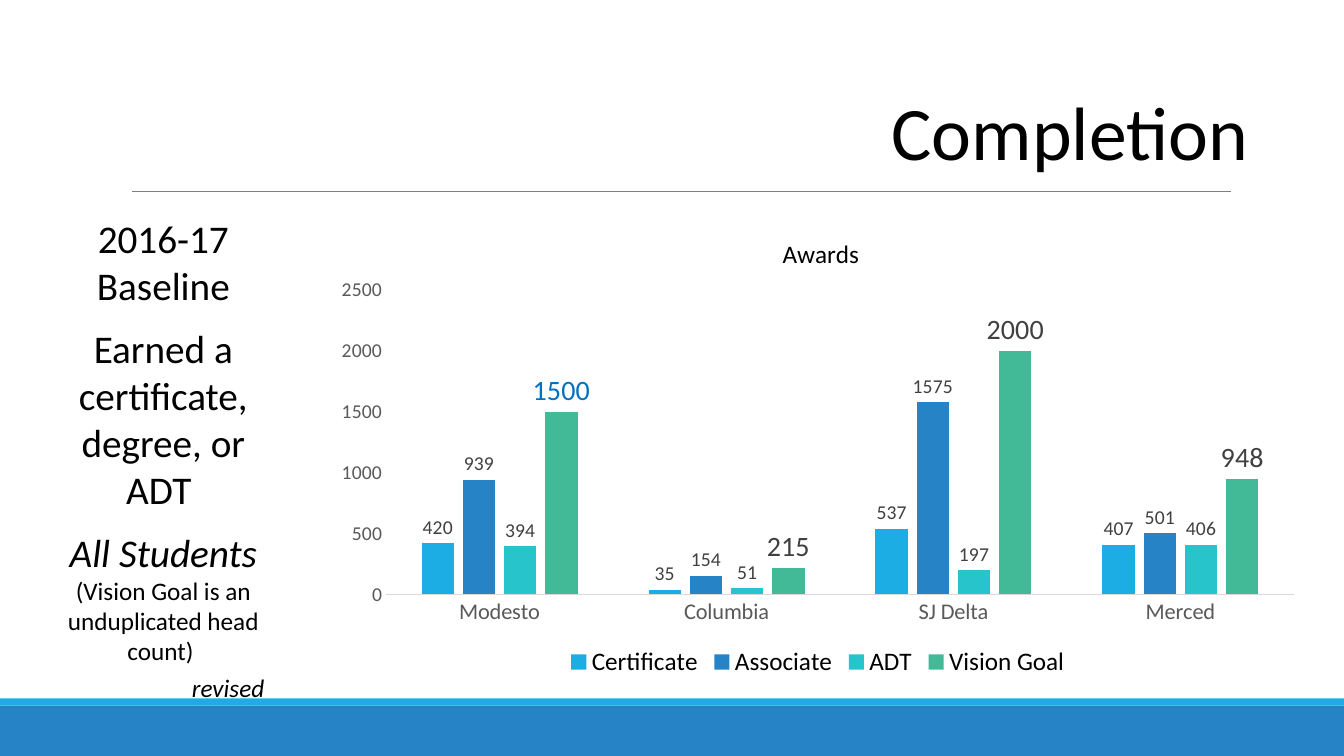
from lxml import etree
from pptx import Presentation
from pptx import util as u
from pptx.chart.data import CategoryChartData
from pptx.dml.color import RGBColor
from pptx.enum import chart as ch, shapes, text
from pptx.oxml import ns

FONT = "Calibri"
CITIES = ["Modesto", "Columbia", "SJ Delta", "Merced"]
AWARDS = [
    ("Certificate", [420, 35, 537, 407], "1CADE4", 14),
    ("Associate", [939, 154, 1575, 501], "2683C6", 14),
    ("ADT", [394, 51, 197, 406], "28C4CC", 14),
    ("Vision Goal", [1500, 215, 2000, 948], "42BA97", 20),
]
NOTES = [
    ("2016-17 Baseline", 28, False, 0),
    ("Earned a certificate, degree, or ADT ", 28, False, 11),
    ("All Students", 28, True, 11),
    ("(Vision Goal is an unduplicated head count) ", 18, False, 0),
    ("revised", 18, True, 5),
]


def rgb(code):
    return RGBColor.from_string(code)


def place(box):
    return [u.Inches(n) for n in box]


def style(font, size, color="000000", italic=False):
    font.name = FONT
    font.size = u.Pt(size)
    font.bold = False
    font.italic = italic
    font.color.rgb = rgb(color)


def bar(slide, box, color):
    rect = slide.shapes.add_shape(shapes.MSO_SHAPE.RECTANGLE, *place(box))
    rect.shadow.inherit = False
    rect.fill.solid()
    rect.fill.fore_color.rgb = rgb(color)
    rect.line.fill.background()


def footer(slide, box):
    left, top, width, height = box
    bar(slide, (left, top + 0.07, width, height - 0.07), "2683C6")
    bar(slide, (left, top, width, 0.07), "1CADE4")


def header(slide, box):
    left, top, width, height = box
    title = slide.shapes.title
    title.left, title.top, title.width, title.height = place(
        (left + 4.13, top, width - 4.13, height))
    frame = title.text_frame
    frame.vertical_anchor = text.MSO_ANCHOR.BOTTOM
    para = frame.paragraphs[0]
    para.alignment = text.PP_ALIGN.RIGHT
    run = para.add_run()
    run.text = "Completion"
    style(run.font, 54)
    base = top + height + 0.11
    rule = slide.shapes.add_connector(
        shapes.MSO_CONNECTOR.STRAIGHT,
        *place((left, base, left + 10.9, base)))
    rule.line.color.rgb = rgb("808080")
    rule.line.width = u.Pt(0.5)
    etree.SubElement(rule._element.spPr, ns.qn("a:effectLst"))


def notes(slide, box):
    frame = slide.shapes.add_textbox(*place(box)).text_frame
    frame.word_wrap = True
    for i, (words, size, italic, gap) in enumerate(NOTES):
        para = frame.add_paragraph() if i else frame.paragraphs[0]
        last = i == len(NOTES) - 1
        para.alignment = text.PP_ALIGN.RIGHT if last else text.PP_ALIGN.CENTER
        para.space_before = u.Pt(gap)
        run = para.add_run()
        run.text = words
        style(run.font, size, italic=italic)


def layout(parent, index, **parts):
    for old in parent.findall(ns.qn("c:layout")):
        parent.remove(old)
    node = etree.Element(ns.qn("c:layout"))
    manual = etree.SubElement(node, ns.qn("c:manualLayout"))
    for tag, val in parts.items():
        etree.SubElement(manual, ns.qn("c:" + tag)).set("val", str(val))
    parent.insert(index, node)


def axes(chart):
    cat, val = chart.category_axis, chart.value_axis
    for axis, size in ((cat, 16), (val, 14)):
        axis.major_tick_mark = ch.XL_TICK_MARK.NONE
        axis.minor_tick_mark = ch.XL_TICK_MARK.NONE
        axis.has_major_gridlines = False
        style(axis.tick_labels.font, size, "595959")
    cat.format.line.color.rgb = rgb("D9D9D9")
    cat.format.line.width = u.Pt(0.75)
    val.format.line.fill.background()
    val.minimum_scale, val.maximum_scale = 0, 2500
    val.major_unit = 500


def awards(slide, box):
    data = CategoryChartData()
    data.categories = CITIES
    for name, vals, _, _ in AWARDS:
        data.add_series(name, vals)
    chart = slide.shapes.add_chart(
        ch.XL_CHART_TYPE.COLUMN_CLUSTERED, *place(box), data).chart
    style(chart.font, 10)
    chart.has_title = True
    run = chart.chart_title.text_frame.paragraphs[0].add_run()
    run.text = "Awards"
    style(run.font, 18)
    chart.has_legend = True
    chart.legend.position = ch.XL_LEGEND_POSITION.BOTTOM
    chart.legend.include_in_layout = False
    style(chart.legend.font, 18)
    axes(chart)
    plot = chart.plots[0]
    plot.gap_width, plot.overlap = 219, -27
    plot.vary_by_categories = False
    above = ch.XL_LABEL_POSITION.OUTSIDE_END
    for series, (_, _, color, size) in zip(plot.series, AWARDS):
        series.format.fill.solid()
        series.format.fill.fore_color.rgb = rgb(color)
        labels = series.data_labels
        labels.show_value = True
        labels.position = above
        style(labels.font, size, "404040")
    goal = plot.series[3].points[0].data_label
    style(goal.font, 20, "0070C0")
    goal.position = above
    layout(chart.chart_title._element, 1,
           xMode="edge", yMode="edge", x=0.46, y=0.05)
    layout(chart._chartSpace.chart.plotArea, 0, layoutTarget="inner",
           xMode="edge", yMode="edge", x=0.065, y=0.173, w=0.915, h=0.642)


def main():
    deck = Presentation()
    deck.slide_width, deck.slide_height = place((13.33, 7.5))
    slide = deck.slides.add_slide(deck.slide_layouts[5])
    footer(slide, (0, 6.93, 13.33, 0.57))
    header(slide, (1.31, 0.78, 11.17, 1.01))
    notes(slide, (0.52, 2.08, 2.2, 4.85))
    awards(slide, (3.19, 2.06, 9.84, 4.71))
    deck.save("out.pptx")


if __name__ == "__main__":
    main()
